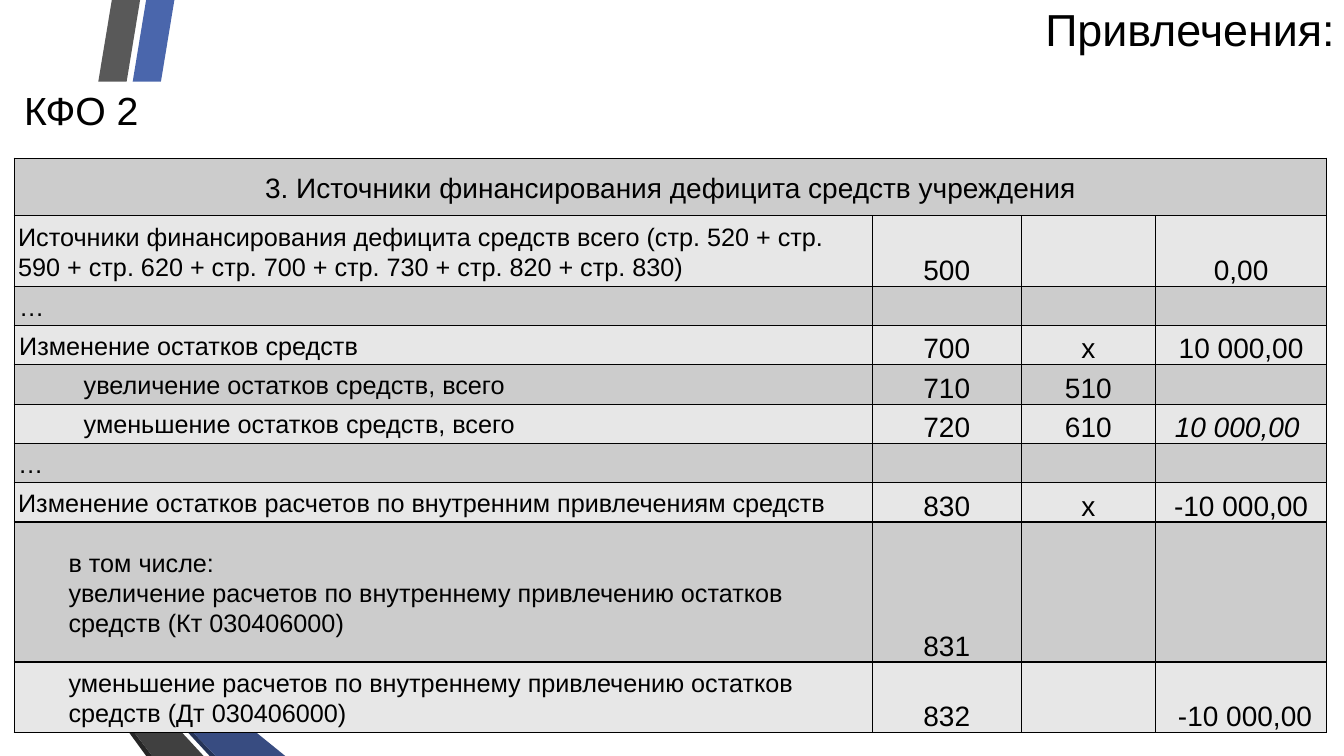
import pptx
import pptx.util
import pptx.dml.color
import pptx.enum.text
import pptx.oxml
import pptx.oxml.ns

Inches, Pt = pptx.util.Inches, pptx.util.Pt
RGBColor = pptx.dml.color.RGBColor
PP_ALIGN, MSO_ANCHOR = pptx.enum.text.PP_ALIGN, pptx.enum.text.MSO_ANCHOR

BLACK = RGBColor(0x00, 0x00, 0x00)
WHITE = RGBColor(0xFF, 0xFF, 0xFF)
DARK_BAND = RGBColor(0xCC, 0xCC, 0xCC)
LIGHT_BAND = RGBColor(0xE7, 0xE7, 0xE7)
BLUE = RGBColor(0x4A, 0x66, 0xAC)
BLUE_SHADE = RGBColor(0x38, 0x4C, 0x81)
BLUE_EDGE = RGBColor(0x25, 0x33, 0x56)
GRAY = RGBColor(0x59, 0x59, 0x59)
GRAY_SHADE = RGBColor(0x40, 0x40, 0x40)
GRAY_EDGE = RGBColor(0x26, 0x26, 0x26)
FONT = "Arial"

RIBBONS = [
    (BLUE, [(0.5, 5.78), (0.77, 5.83), (1.73, 0), (1.45, 0)]),
    (GRAY, [(1.39, 0), (1.11, 0), (0.16, 5.73), (0.44, 5.77)]),
    (GRAY_EDGE, [(0.16, 5.73), (1.45, 7.5), (1.51, 7.5)]),
    (BLUE_EDGE, [(0.5, 5.79), (2.08, 7.5), (2.14, 7.5)]),
    (BLUE_SHADE, [(0.5, 5.79), (2.14, 7.5), (2.83, 7.5), (0.77, 5.83), (0.5, 5.78)]),
    (GRAY_SHADE, [(2.02, 7.5), (0.48, 5.83), (0.43, 5.77), (0.16, 5.73), (1.51, 7.5)]),
]

TITLE = "Привлечения:"
SUBTITLE = "КФО 2"
SECTION = "3. Источники финансирования дефицита средств учреждения"
COLUMN_WIDTHS = [8.51, 1.48, 1.33, 1.7]

# height, space after, side margin, (left margin, first-line indent), cells
ROWS = [
    (0.57, 8, 0.04, (0, 0), [SECTION, "", "", ""]),
    (0.7, 8, 0.04, (0, 0), [
        "Источники финансирования дефицита средств всего (стр. 520 + стр. 590 + "
        "стр. 620 + стр. 700 + стр. 730 + стр. 820 + стр. 830)", "500", "", "0,00"]),
    (0.39, 0, 0.05, (0, 0), ["…", "", "", ""]),
    (0.39, 0, 0.05, (0, 0), ["Изменение остатков средств", "700", "х", "10 000,00"]),
    (0.39, 0, 0.05, (0.5, 0.14), ["увеличение остатков средств, всего", "710", "510", ""]),
    (0.39, 0, 0.05, (0.5, 0.14), ["уменьшение остатков средств, всего", "720", "610", "10 000,00 "]),
    (0.39, 8, 0.04, (0, 0), ["…", "", "", ""]),
    (0.39, 8, 0.04, (0, 0), [
        "Изменение остатков расчетов по внутренним привлечениям средств", "830", "х", "-10 000,00"]),
    (1.39, 0, 0.04, (0.5, 0), [
        "в том числе:\nувеличение расчетов по внутреннему привлечению остатков "
        "средств (Кт 030406000)", "831", "", ""]),
    (0.7, 8, 0.04, (0.5, 0), [
        "уменьшение расчетов по внутреннему привлечению остатков средств (Дт 030406000)",
        "832", "", " -10 000,00"]),
]
ITALIC_CELL = (5, 3)


def style_font(font, size):
    font.name, font.size, font.color.rgb = FONT, Pt(size), BLACK


def add_ribbon(slide, position, color, points):
    corners = [(Inches(x), Inches(y)) for x, y in points]
    outline = slide.shapes.build_freeform(*corners[0])
    outline.add_line_segments(corners[1:], close=True)
    ribbon = outline.convert_to_shape()
    ribbon.shadow.inherit = False
    ribbon.fill.solid()
    ribbon.fill.fore_color.rgb = color
    ribbon.line.fill.background()
    slide.shapes._spTree.insert(2 + position, ribbon._element)  # behind the placeholders


def fill_placeholder(holder, box, text, size, align):
    holder.left, holder.top, holder.width, holder.height = map(Inches, box)
    frame = holder.text_frame
    frame.text = text
    frame.auto_size = pptx.enum.text.MSO_AUTO_SIZE.NONE
    paragraph = frame.paragraphs[0]
    paragraph.alignment = align
    style_font(paragraph.runs[0].font, size)
    return paragraph


def add_borders(cell):
    properties = cell._tc.get_or_add_tcPr()
    for side in ("lnL", "lnR", "lnT", "lnB"):
        properties.append(pptx.oxml.parse_xml(
            f'<a:{side} {pptx.oxml.ns.nsdecls("a")} w="12700"><a:solidFill>'
            f'<a:srgbClr val="{BLACK}"/></a:solidFill></a:{side}>'))


def fill_cell(cell, text, size, color, align, anchor, space_after, side, indents):
    add_borders(cell)
    cell.fill.solid()
    cell.fill.fore_color.rgb = color
    cell.margin_left = cell.margin_right = Inches(side)
    cell.margin_top, cell.margin_bottom = Inches(0.01), 0
    cell.vertical_anchor = anchor
    cell.text_frame.text = text
    for paragraph in cell.text_frame.paragraphs:
        paragraph.alignment = align
        paragraph.line_spacing = 1.07
        paragraph.space_after = Pt(space_after)
        style_font(paragraph.font, size)
        left, first = indents
        if left:
            paragraph.level = 1
            margins = paragraph._p.get_or_add_pPr()
            margins.set("marL", str(Inches(left)))
            margins.set("indent", str(Inches(first)))
        for run in paragraph.runs:
            style_font(run.font, size)


def add_sources_table(slide):
    heights = [row[0] for row in ROWS]
    table = slide.shapes.add_table(
        len(ROWS), len(COLUMN_WIDTHS), Inches(0.14), Inches(1.57),
        Inches(sum(COLUMN_WIDTHS)), Inches(sum(heights))).table
    table.first_row = table.horz_banding = False
    for column, width in zip(table.columns, COLUMN_WIDTHS):
        column.width = Inches(width)
    for r, (height, space_after, side, indents, texts) in enumerate(ROWS):
        table.rows[r].height = Inches(height)
        band = LIGHT_BAND if r % 2 else DARK_BAND
        for c, text in enumerate(texts):
            is_label = c == 0 and r > 0
            fill_cell(
                table.cell(r, c), text,
                20 if text and not is_label else 18, band,
                PP_ALIGN.LEFT if is_label else PP_ALIGN.CENTER,
                MSO_ANCHOR.MIDDLE if c == 0 else MSO_ANCHOR.BOTTOM,
                space_after, side, indents if c == 0 else (0, 0))
    table.cell(0, 0).merge(table.cell(0, len(COLUMN_WIDTHS) - 1))
    table.cell(*ITALIC_CELL).text_frame.paragraphs[0].runs[0].font.italic = True


def main():
    deck = pptx.Presentation()
    deck.slide_width, deck.slide_height = Inches(13.33), Inches(7.5)
    slide = deck.slides.add_slide(deck.slide_layouts[1])

    for position, (color, points) in enumerate(RIBBONS):
        add_ribbon(slide, position, color, points)

    fill_placeholder(slide.shapes.title, (3.38, 0, 9.96, 0.57), TITLE, 32, PP_ALIGN.RIGHT)

    body = slide.placeholders[1]
    body.fill.solid()
    body.fill.fore_color.rgb = WHITE
    subtitle = fill_placeholder(body, (0.14, 0.81, 13.02, 5.74), SUBTITLE, 28, PP_ALIGN.LEFT)
    subtitle.space_after = Pt(6)
    bullet_free = subtitle._p.get_or_add_pPr()
    bullet_free.set("marL", "0")
    bullet_free.set("indent", "0")
    bullet_free.append(pptx.oxml.parse_xml(f'<a:buNone {pptx.oxml.ns.nsdecls("a")}/>'))

    add_sources_table(slide)
    deck.save("out.pptx")


if __name__ == "__main__":
    main()
